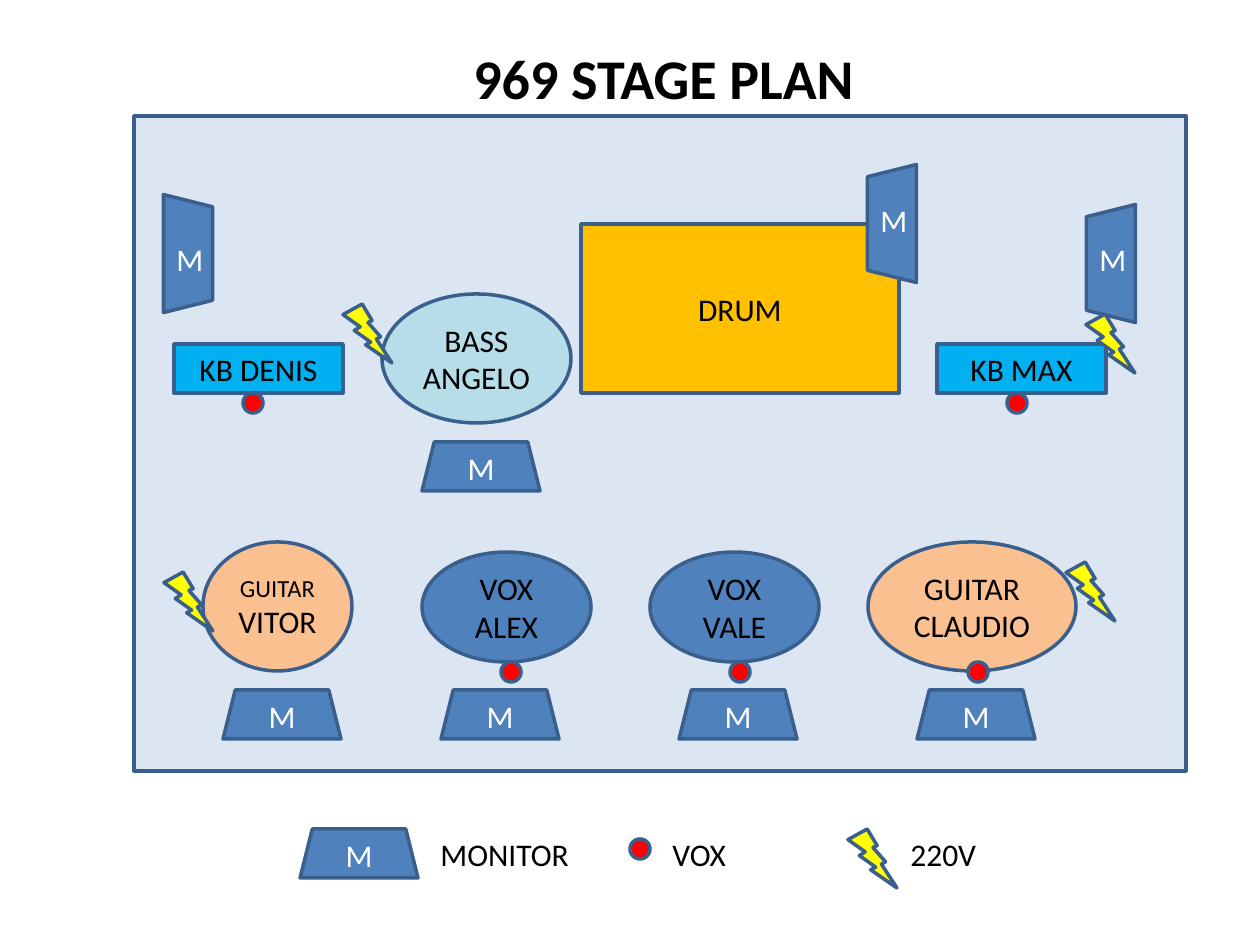
from pptx import Presentation, util as u
from pptx.dml.color import RGBColor
from pptx.enum import shapes, text

PX = u.Inches(1) / 126
KIND = shapes.MSO_SHAPE
OUTLINE, BLUE, BLACK, WHITE = "3A5F8C", "4F81BD", "000000", "FFFFFF"
PEACH, SKY, PALE, YELLOW, RED = "FAC090", "00B0F0", "B7DEE8", "FFFF00", "FF0000"
MONITOR, BOLT, MIC, KEYS = (118, 49), (49, 59), (20, 20), (169, 49)


def emu(*lengths):
    return [u.Emu(round(length * PX)) for length in lengths]


def paint(color_format, value):
    color_format.rgb = RGBColor.from_string(value)


def style(paragraph, color, size, bold=False):
    for run in paragraph.runs:
        run.font.name = "Calibri"
        run.font.size = u.Pt(size)
        run.font.bold = bold
        paint(run.font.color, color)


def add_part(slide, kind, origin, at, size, fill, lines=(), color=BLACK, sizes=(18, 18)):
    left, top = origin[0] + at[0], origin[1] + at[1]
    part = slide.shapes.add_shape(kind, *emu(left, top, *size))
    part.shadow.inherit = False
    part.fill.solid()
    paint(part.fill.fore_color, fill)
    paint(part.line.color, OUTLINE)
    part.line.width = u.Pt(2)
    if lines:
        frame = part.text_frame
        frame.text = "\n".join(lines)
        frame.vertical_anchor = text.MSO_ANCHOR.MIDDLE
        for paragraph, points in zip(frame.paragraphs, sizes):
            paragraph.alignment = text.PP_ALIGN.CENTER
            style(paragraph, color, points)
    return part


def add_label(slide, origin, at, size, words, color=BLACK, points=18, bold=False):
    label = slide.shapes.add_textbox(*emu(origin[0] + at[0], origin[1] + at[1], *size))
    frame = label.text_frame
    frame.text = words
    frame.word_wrap = False
    frame.auto_size = text.MSO_AUTO_SIZE.SHAPE_TO_FIT_TEXT
    style(frame.paragraphs[0], color, points, bold)


def add_monitor(slide, origin, at):
    add_part(slide, KIND.TRAPEZOID, origin, at, MONITOR, BLUE, ["M"], WHITE)


def add_side_monitor(slide, origin, at, rotation, label_shift):
    monitor = add_part(slide, KIND.TRAPEZOID, origin, at, MONITOR, BLUE)
    monitor.rotation = rotation
    add_label(slide, origin, (at[0] + 35, at[1] + label_shift), (53, 50), "M", WHITE)


def add_bolt(slide, origin, at):
    add_part(slide, KIND.LIGHTNING_BOLT, origin, at, BOLT, YELLOW)


def add_mic(slide, origin, at):
    add_part(slide, KIND.OVAL, origin, at, MIC, RED)


def add_stage(slide, left, top, width, height):
    origin = left, top
    add_part(slide, KIND.RECTANGLE, origin, (0, 0), (width, height), "DCE6F2")
    add_part(slide, KIND.RECTANGLE, origin, (447, 108), (318, 169), "FFC000", ["DRUM"])
    for x, name in ((803, "KB MAX"), (40, "KB DENIS")):
        add_part(slide, KIND.RECTANGLE, origin, (x, 228), KEYS, SKY, [name])
    players = (
        ((69, 426), (149, 129), PEACH, ("GUITAR", "VITOR"), (14, 18)),
        ((734, 426), (208, 129), PEACH, ("GUITAR", "CLAUDIO"), (18, 18)),
        ((248, 178), (189, 129), PALE, ("BASS", "ANGELO"), (18, 18)),
        ((288, 436), (169, 110), BLUE, ("VOX", "ALEX"), (18, 18)),
        ((516, 436), (169, 110), BLUE, ("VOX", "VALE"), (18, 18)),
    )
    for at, size, fill, lines, sizes in players:
        add_part(slide, KIND.OVAL, origin, at, size, fill, lines, sizes=sizes)
    for at in ((89, 574), (307, 574), (545, 574), (783, 574), (288, 326)):
        add_monitor(slide, origin, at)
    for at, rotation, shift in (((918, 123), 270, -5), ((-5, 113), 90, 5), ((699, 83), 270, -4)):
        add_side_monitor(slide, origin, at, rotation, shift)
    for at in ((209, 188), (952, 198), (932, 446), (30, 456)):
        add_bolt(slide, origin, at)
    for at in ((367, 546), (596, 546), (834, 546), (109, 277), (873, 277)):
        add_mic(slide, origin, at)


def add_legend(slide, left, top):
    origin = left, top
    add_monitor(slide, origin, (0, 0))
    add_mic(slide, origin, (330, 10))
    add_bolt(slide, origin, (548, 0))
    for x, width, meaning in ((128, 155, "MONITOR"), (360, 79, "VOX"), (598, 92, "220V")):
        add_label(slide, origin, (x, 0), (width, 50), meaning)


def main():
    deck = Presentation()
    deck.slide_width, deck.slide_height = emu(1260, 945)
    slide = deck.slides.add_slide(deck.slide_layouts[6])
    add_stage(slide, 134, 116, 1052, 655)
    add_label(slide, (461, 37), (0, 0), (410, 81), "969 STAGE PLAN", points=32, bold=True)
    add_legend(slide, 300, 829)
    deck.save("out.pptx")


if __name__ == "__main__":
    main()
